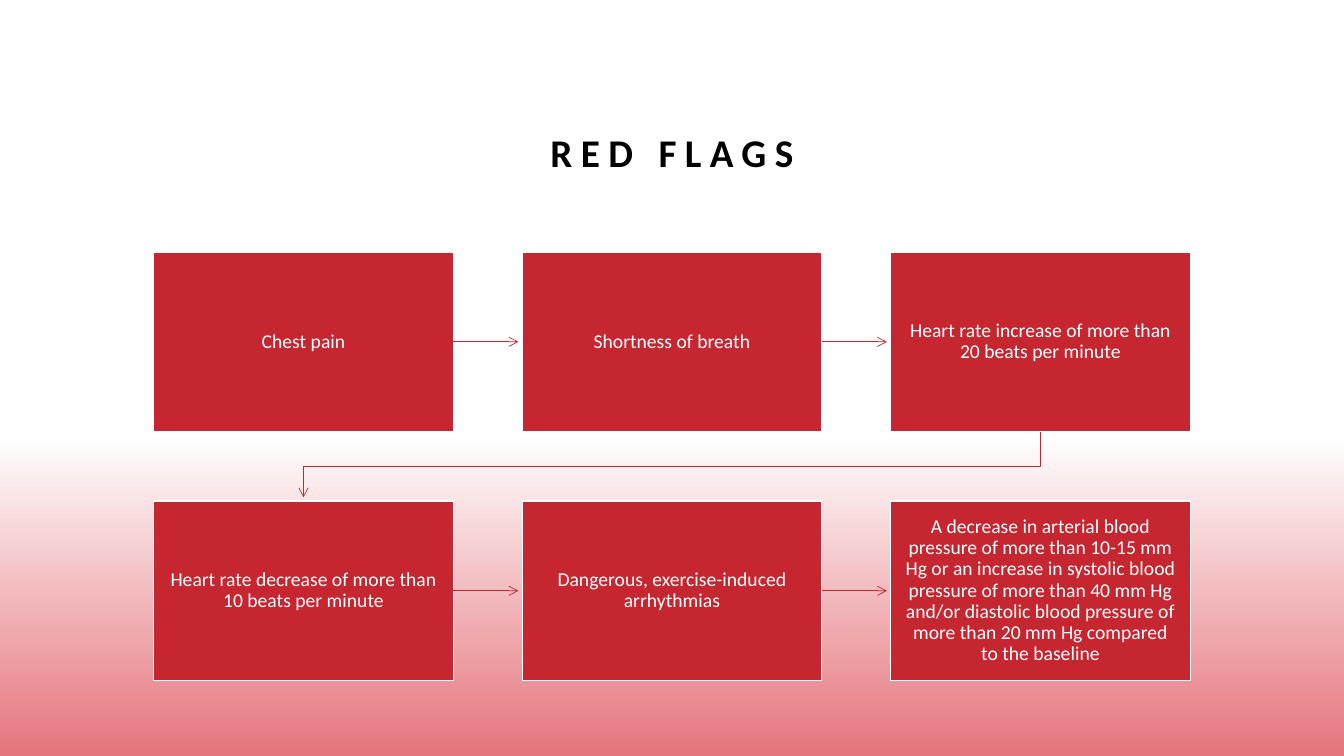
from dataclasses import dataclass

from lxml.etree import SubElement
from pptx import Presentation
from pptx.dml.color import RGBColor
from pptx.enum.shapes import MSO_CONNECTOR as Connector, MSO_SHAPE as Preset
from pptx.enum.text import MSO_ANCHOR as Anchor, PP_ALIGN as Align
from pptx.oxml.ns import qn
from pptx.shapes.autoshape import Shape
from pptx.slide import Slide
from pptx.text.text import TextFrame
from pptx.util import Pt

RED, PINK, WHITE, BLACK = "C62630", "E5757C", "FFFFFF", "000000"
SLIDE_W, SLIDE_H = 960, 540
GLOW_TOP = 276.5
COLUMNS = 3
LEFT, TOP = 109.8, 180.1
BOX_W, BOX_H = 214, 128.2
STEP_X, STEP_Y = 263.2, 177.8
INSET = 10.2
ARROW_GAP = 2.7
BEND_DROP = 25
BOTTOM_GAP = 0.5
RIGHT = 3


@dataclass(frozen=True)
class Flag:
    text: str
    column: int
    row: int

    @property
    def left(self) -> float:
        return LEFT + self.column * STEP_X

    @property
    def top(self) -> float:
        return TOP + self.row * STEP_Y

    @property
    def center_x(self) -> float:
        return self.left + BOX_W / 2

    @property
    def center_y(self) -> float:
        return self.top + BOX_H / 2


WARNINGS = (
    "Chest pain",
    "Shortness of breath",
    "Heart rate increase of more than 20 beats per minute",
    "Heart rate decrease of more than 10 beats per minute",
    "Dangerous, exercise-induced arrhythmias",
    "A decrease in arterial blood pressure of more than 10-15 mm Hg or an "
    "increase in systolic blood pressure of more than 40 mm Hg and/or diastolic "
    "blood pressure of more than 20 mm Hg compared to the baseline",
)
FLAGS = [Flag(text, i % COLUMNS, i // COLUMNS) for i, text in enumerate(WARNINGS)]


def rgb(value: str) -> RGBColor:
    return RGBColor.from_string(value)


def write(frame: TextFrame, text: str, size: float, color: str, spacing: float,
          bold: bool = False, tracking: float = 0) -> None:
    """Fill a frame with one centred paragraph that wraps."""
    frame.word_wrap = True
    frame.vertical_anchor = Anchor.MIDDLE
    paragraph = frame.paragraphs[0]
    paragraph.alignment = Align.CENTER
    paragraph.line_spacing = spacing
    run = paragraph.add_run()
    run.text = text
    run.font.name = "Calibri"
    run.font.size = Pt(size)
    run.font.bold = bold
    run.font.color.rgb = rgb(color)
    if tracking:
        run.font._element.set("spc", str(round(tracking * 100)))


def add_glow(slide: Slide) -> None:
    """Add the band that fades from white to pink at the foot of the slide."""
    glow = slide.shapes.add_shape(Preset.RECTANGLE, Pt(0), Pt(GLOW_TOP),
                                  Pt(SLIDE_W), Pt(SLIDE_H - GLOW_TOP))
    glow.shadow.inherit = False
    glow.line.fill.background()
    glow.fill.gradient()
    glow.fill.gradient_angle = 270
    for stop, color, position in zip(glow.fill.gradient_stops, (WHITE, PINK), (0.13, 1)):
        stop.color.rgb = rgb(color)
        stop.position = position


def add_title(slide: Slide) -> None:
    title = slide.shapes.add_textbox(Pt(75), Pt(60), Pt(810), Pt(90.5))
    write(title.text_frame, "RED FLAGS", 28, BLACK, 1.2, bold=True, tracking=6)


def add_box(slide: Slide, flag: Flag) -> Shape:
    box = slide.shapes.add_shape(Preset.RECTANGLE, Pt(flag.left), Pt(flag.top),
                                 Pt(BOX_W), Pt(BOX_H))
    box.shadow.inherit = False
    box.fill.solid()
    box.fill.fore_color.rgb = rgb(RED)
    box.line.color.rgb = rgb(WHITE)
    box.line.width = Pt(1)
    frame = box.text_frame
    frame.margin_left = frame.margin_right = Pt(INSET)
    frame.margin_top = frame.margin_bottom = Pt(INSET)
    write(frame, flag.text, 14, WHITE, 0.9)
    return box


def style_arrow(arrow) -> None:
    arrow.line.color.rgb = rgb(RED)
    arrow.line.width = Pt(0.5)
    SubElement(arrow.line._get_or_add_ln(), qn("a:tailEnd"), type="arrow")
    SubElement(arrow._element.spPr, qn("a:effectLst"))


def add_straight_arrow(slide: Slide, box: Shape, start: Flag, end: Flag) -> None:
    arrow = slide.shapes.add_connector(
        Connector.STRAIGHT, Pt(start.left + BOX_W), Pt(start.center_y),
        Pt(end.left - ARROW_GAP), Pt(end.center_y))
    arrow.begin_connect(box, RIGHT)
    style_arrow(arrow)


def add_return_arrow(slide: Slide, start: Flag, end: Flag) -> None:
    """Lead from the end of one row to the start of the next."""
    bottom = start.top + BOX_H
    bend = bottom + BEND_DROP
    builder = slide.shapes.build_freeform(Pt(start.center_x), Pt(bottom + BOTTOM_GAP))
    builder.add_line_segments(
        [(Pt(start.center_x), Pt(bend)), (Pt(end.center_x), Pt(bend)),
         (Pt(end.center_x), Pt(end.top - ARROW_GAP))], close=False)
    arrow = builder.convert_to_shape()
    arrow.fill.background()
    style_arrow(arrow)


def main() -> None:
    deck = Presentation()
    deck.slide_width, deck.slide_height = Pt(SLIDE_W), Pt(SLIDE_H)
    slide = deck.slides.add_slide(deck.slide_layouts[6])
    add_glow(slide)
    add_title(slide)
    boxes = [add_box(slide, flag) for flag in FLAGS]
    for box, start, end in zip(boxes, FLAGS, FLAGS[1:]):
        if start.row == end.row:
            add_straight_arrow(slide, box, start, end)
        else:
            add_return_arrow(slide, start, end)
    deck.save("out.pptx")


if __name__ == "__main__":
    main()
